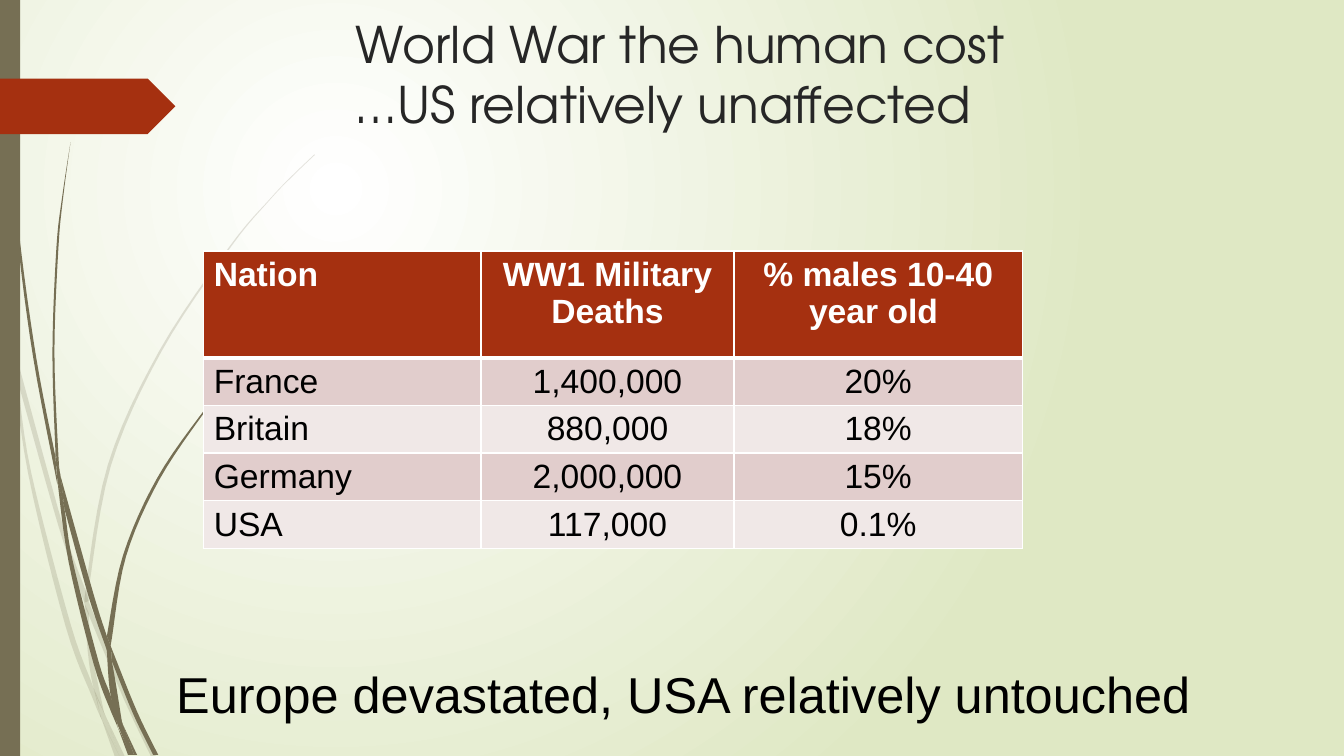
import dataclasses

import pptx
import pptx.dml.color
import pptx.enum.shapes
import pptx.enum.text
import pptx.oxml
import pptx.oxml.ns
import pptx.util
from pptx.util import Inches


def rgb(code):
    return pptx.dml.color.RGBColor.from_string(code)


@dataclasses.dataclass(frozen=True)
class Theme:
    olive: str = "766F54"
    rust: str = "A53010"
    bands: tuple = ("E1CDCC", "F0E8E7")
    glow: tuple = ("FFFFFF", "DFE8C4")
    title: dict = dataclasses.field(default_factory=lambda: {
        "name": "TeX Gyre Adventor", "size": pptx.util.Pt(36), "color": "262626"})
    header: dict = dataclasses.field(default_factory=lambda: {
        "name": "Arial", "size": pptx.util.Pt(24), "bold": True, "color": "FFFFFF"})
    body: dict = dataclasses.field(default_factory=lambda: {
        "name": "Arial", "size": pptx.util.Pt(24), "bold": False, "color": "000000"})
    caption: dict = dataclasses.field(default_factory=lambda: {
        "name": "Arial", "size": pptx.util.Pt(36), "color": "000000"})


def write(frame, text, style):
    """Fill a text frame and format every run of it."""
    frame.text = text
    for run in frame.paragraphs[0].runs:
        for key, value in style.items():
            if key == "color":
                run.font.color.rgb = rgb(value)
            else:
                setattr(run.font, key, value)


theme = Theme()
qn = pptx.oxml.ns.qn
deck = pptx.Presentation()
deck.slide_width, deck.slide_height = Inches(13.33), Inches(7.5)
slide = deck.slides.add_slide(deck.slide_layouts[5])

# Background glow
glow = slide.background.fill
glow.gradient()
for stop, code in zip(glow.gradient_stops, theme.glow):
    stop.color.rgb = rgb(code)
gradient = slide.element.find(".//" + qn("a:gradFill"))
gradient.remove(gradient.find(qn("a:lin")))
gradient.append(pptx.oxml.parse_xml(
    f'<a:path {pptx.oxml.ns.nsdecls("a")} path="circle">'
    '<a:fillToRect l="50000" t="50000" r="100000" b="100000"/></a:path>'))

# Grass: each piece is one edge down and the other edge back up
pale_grass = [
    ([(0, 2.82), (0.09, 3.22), (0.11, 3.5)], [(0.1, 3.44), (0, 2.99)]),
    ([(0.14, 3.45), (0.62, 5.2), (0.85, 5.86)], [(0.84, 5.99), (0.58, 5.22), (0.17, 3.76)]),
    ([(0.88, 5.96), (0.92, 6.07), (1.27, 6.92), (1.55, 7.51)],
     [(1.5, 7.51), (1.23, 6.94), (0.88, 6.1)]),
    ([(1.05, 7.11), (1.24, 7.51)], [(1.19, 7.51), (1.05, 7.11)]),
    ([(0.11, 3.5), (0.17, 3.76), (0.31, 4.69), (0.7, 6.19), (0.93, 6.83), (0.99, 7.07)],
     [(1.01, 7.14), (0.92, 6.93), (0.65, 6.21), (0.28, 4.7), (0.11, 3.5)]),
    ([(0.84, 5.99), (0.87, 6.46), (0.93, 6.83), (1.05, 7.11)],
     [(1.03, 7.06), (0.91, 6.46), (0.88, 6.08)]),
    ([(3.12, 1.53), (2.89, 1.75), (2.68, 1.97), (2.28, 2.44), (1.58, 3.48), (1.07, 4.61),
      (0.85, 5.84), (0.88, 5.96)],
     [(0.88, 5.84), (1.1, 4.62), (1.6, 3.49), (2.29, 2.45), (2.68, 1.98), (2.9, 1.75),
      (3.12, 1.54)]),
    ([(1.01, 7.14), (1.14, 7.51)], [(1.19, 7.51), (1.01, 7.14)]),
    ([(0.85, 5.86), (0.84, 5.99), (0.88, 6.1)], [(0.88, 5.96), (0.85, 5.86)]),
    ([(0.93, 6.83), (0.99, 7.07), (1.01, 7.14), (1.19, 7.51)], [(1.05, 7.11), (0.93, 6.83)]),
]
dark_grass = [
    ([(0.03, 0), (0.04, 0.48), (0.07, 1.1), (0.17, 2.33), (0.33, 3.55), (0.57, 4.81)],
     [(0.55, 4.53), (0.36, 3.55), (0.19, 2.32), (0.08, 1.09), (0.05, 0.48), (0.04, 0)]),
    ([(0.6, 4.72), (0.93, 5.9), (1.06, 6.31)], [(1.06, 6.45), (0.88, 5.92), (0.64, 5.05)]),
    ([(1.1, 6.41), (1.13, 6.49), (1.36, 7.06), (1.57, 7.49)],
     [(1.52, 7.49), (1.32, 7.08), (1.11, 6.56)]),
    ([(0.57, 4.77), (0.64, 5.05), (0.72, 5.56), (0.98, 6.57), (1.1, 6.91), (1.17, 7.22)],
     [(1.11, 7.08), (0.93, 6.59), (0.68, 5.57), (0.57, 4.77)]),
    ([(0.7, 1.41), (0.63, 1.93), (0.58, 2.45), (0.54, 3.49), (0.58, 4.53), (0.6, 4.72)],
     [(0.55, 4.49), (0.52, 3.49), (0.56, 2.45), (0.62, 1.93), (0.7, 1.41)]),
    ([(1.22, 7.19), (1.36, 7.49)], [(1.33, 7.49), (1.22, 7.19)]),
    ([(0.55, 4.49), (0.6, 4.72), (0.64, 5.05)], [(0.57, 4.77), (0.55, 4.53)]),
    ([(2.6, 3.44), (2.31, 3.73), (2.04, 4.05), (1.56, 4.74), (1.22, 5.51), (1.06, 6.31)],
     [(1.1, 6.41), (1.11, 6.33), (1.25, 5.52), (1.58, 4.76), (2.05, 4.06), (2.31, 3.74),
      (2.61, 3.44)]),
    ([(1.17, 7.22), (1.27, 7.49)], [(1.31, 7.49), (1.17, 7.22)]),
    ([(1.06, 6.45), (1.1, 6.91), (1.22, 7.19)], [(1.21, 7.16), (1.11, 6.56), (1.06, 6.45)]),
    ([(1.06, 6.31), (1.06, 6.45), (1.11, 6.56)], [(1.1, 6.41), (1.06, 6.31)]),
    ([(1.1, 6.91), (1.16, 7.17), (1.3, 7.49)], [(1.33, 7.49), (1.22, 7.19), (1.1, 6.91)]),
]
STEPS = 6
for opacity, edges in [(20, e) for e in pale_grass] + [(100, e) for e in dark_grass]:
    outline = []
    for edge in edges:
        # Catmull-Rom curve through the points of the edge
        padded = [edge[0], *edge, edge[-1]]
        for a, b, c, d in zip(padded, padded[1:], padded[2:], padded[3:]):
            for step in range(STEPS):
                t = step / STEPS
                outline.append([Inches(0.5 * (
                    2 * q + (r - p) * t + (2 * p - 5 * q + 4 * r - s) * t ** 2
                    + (3 * q - p - 3 * r + s) * t ** 3)) for p, q, r, s in zip(a, b, c, d)])
        outline.append([Inches(value) for value in edge[-1]])
    builder = slide.shapes.build_freeform(*outline[0])
    builder.add_line_segments(outline[1:], close=True)
    blade = builder.convert_to_shape()
    blade.shadow.inherit = False
    blade.fill.solid()
    blade.fill.fore_color.rgb = rgb(theme.olive)
    blade.line.fill.background()
    if opacity < 100:
        blade.element.spPr.find(".//" + qn("a:srgbClr")).append(pptx.oxml.parse_xml(
            f'<a:alpha {pptx.oxml.ns.nsdecls("a")} val="{opacity * 1000}"/>'))

# Side bar and arrow tab
presets = pptx.enum.shapes.MSO_SHAPE
for preset, code, place in [
    (presets.RECTANGLE, theme.olive, (0, 0, 0.2, 7.5)),
    (presets.PENTAGON, theme.rust, (0, 0.78, 1.74, 0.55)),
]:
    ornament = slide.shapes.add_shape(preset, *map(Inches, place))
    ornament.shadow.inherit = False
    ornament.fill.solid()
    ornament.fill.fore_color.rgb = rgb(code)
    ornament.line.fill.background()

# Title
title = slide.shapes.title
title.left, title.top, title.width, title.height = map(Inches, (3.43, 0.08, 9.75, 1.4))
write(title.text_frame, "World War the human cost\v…US relatively unaffected", theme.title)
for key, value in {"vertical_anchor": pptx.enum.text.MSO_ANCHOR.TOP, "word_wrap": True,
                   "auto_size": pptx.enum.text.MSO_AUTO_SIZE.NONE}.items():
    setattr(title.text_frame, key, value)
title.text_frame.paragraphs[0].alignment = pptx.enum.text.PP_ALIGN.LEFT

# Casualty table
losses = [
    ("Nation", "WW1 Military Deaths", "% males 10-40 year old "),
    ("France", "1,400,000", "20%"),
    ("Britain", "880,000", "18%"),
    ("Germany", "2,000,000", "15%"),
    ("USA", "117,000", "0.1%"),
]
casualties = slide.shapes.add_table(
    len(losses), 3, *map(Inches, (2.02, 2.49, 8.12, 2.86))).table
for column, width in zip(casualties.columns, (2.75, 2.51, 2.86)):
    column.width = Inches(width)
for i, nation in enumerate(losses):
    casualties.rows[i].height = Inches(0.45 if i else 1.06)
    for j, entry in enumerate(nation):
        cell = casualties.cell(i, j)
        write(cell.text_frame, entry, theme.body if i else theme.header)
        if j:
            cell.text_frame.paragraphs[0].alignment = pptx.enum.text.PP_ALIGN.CENTER
        for side in "LRTB":
            thick = (i, side) in [(0, "B"), (1, "T")]
            cell._tc.get_or_add_tcPr().append(pptx.oxml.parse_xml(
                f'<a:ln{side} {pptx.oxml.ns.nsdecls("a")} w="{38100 if thick else 12700}">'
                f'<a:solidFill><a:srgbClr val="FFFFFF"/></a:solidFill></a:ln{side}>'))
        cell.fill.solid()
        cell.fill.fore_color.rgb = rgb(theme.bands[(i - 1) % 2] if i else theme.rust)

# Conclusion
conclusion = slide.shapes.add_textbox(*map(Inches, (1.65, 6.53, 10.87, 0.71))).text_frame
conclusion.word_wrap = True
conclusion.auto_size = pptx.enum.text.MSO_AUTO_SIZE.SHAPE_TO_FIT_TEXT
write(conclusion, "Europe devastated, USA relatively untouched", theme.caption)

deck.save("out.pptx")
